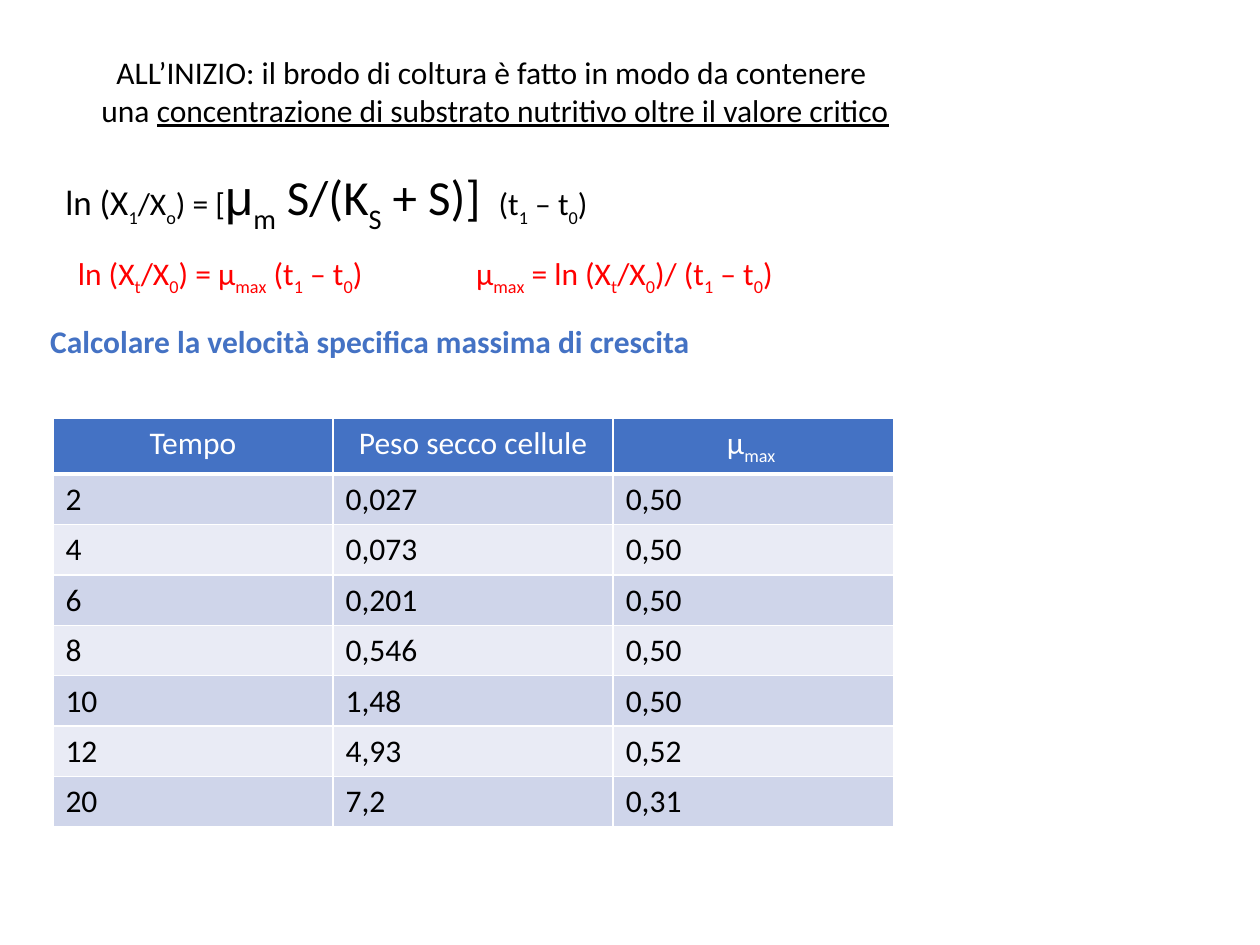
from lxml.etree import SubElement
from pptx import Presentation
from pptx.dml.color import RGBColor
from pptx.enum.text import MSO_AUTO_SIZE, PP_ALIGN
from pptx.oxml.ns import qn
from pptx.util import Inches, Pt

BLACK = RGBColor(0x00, 0x00, 0x00)
WHITE = RGBColor(0xFF, 0xFF, 0xFF)
RED = RGBColor(0xFF, 0x00, 0x00)
BLUE = RGBColor(0x44, 0x72, 0xC4)
BAND_DARK = RGBColor(0xCF, 0xD5, 0xEA)
BAND_LIGHT = RGBColor(0xE9, 0xEB, 0xF5)


def add_runs(paragraph, text, color=BLACK, size=18, font="Calibri", drop=-25):
    """Add text as runs; parts between underscores become subscripts."""
    for index, part in enumerate(text.split("_")):
        if not part:
            continue
        run = paragraph.add_run()
        run.text = part
        run.font.name = font
        run.font.size = Pt(size)
        run.font.color.rgb = color
        if index % 2:
            run.font._element.set("baseline", str(drop * 1000))
    return run


def add_text_box(left, top, width, height, wrap=True):
    box = slide.shapes.add_textbox(Inches(left), Inches(top), Inches(width), Inches(height))
    box.text_frame.word_wrap = wrap
    box.text_frame.auto_size = MSO_AUTO_SIZE.SHAPE_TO_FIT_TEXT
    return box.text_frame


presentation = Presentation()
presentation.slide_width = Inches(10)
presentation.slide_height = Inches(7.5)
slide = presentation.slides.add_slide(presentation.slide_layouts[6])

# Introduction
introduction = add_text_box(0.3, 0.37, 7.26, 0.71)
first_line = introduction.paragraphs[0]
second_line = introduction.add_paragraph()
first_line.alignment = second_line.alignment = PP_ALIGN.CENTER
add_runs(first_line, "ALL’INIZIO: il brodo di coltura è fatto in modo da contenere ")
add_runs(second_line, "una ")
underlined = add_runs(second_line, "concentrazione di substrato nutritivo oltre il valore critico")
underlined.font.underline = True

# Task
task = add_text_box(0.3, 2.51, 5.32, 0.4, wrap=False)
add_runs(task.paragraphs[0], "Calcolare la velocità specifica massima di crescita", BLUE).font.bold = True

# Growth table
header = ["Tempo", "Peso secco cellule", "μ_max _"]
measurements = [
    ["2", "0,027", "0,50"],
    ["4", "0,073", "0,50"],
    ["6", "0,201", "0,50"],
    ["8", "0,546", "0,50"],
    ["10", "1,48", "0,50"],
    ["12", "4,93", "0,52"],
    ["20", "7,2", "0,31"],
]
rows = [header] + measurements
table = slide.shapes.add_table(
    len(rows), len(header), Inches(0.42), Inches(3.32), Inches(6.67), Inches(3.24)
).table
for column in table.columns:
    column.width = Inches(6.67 / len(header))
for row_index, values in enumerate(rows):
    is_header = row_index == 0
    table.rows[row_index].height = Inches(0.44 if is_header else 0.4)
    for column_index, value in enumerate(values):
        cell = table.cell(row_index, column_index)
        paragraph = cell.text_frame.paragraphs[0]
        if is_header:
            paragraph.alignment = PP_ALIGN.CENTER
        add_runs(paragraph, value, WHITE if is_header else BLACK)
        properties = cell._tc.get_or_add_tcPr()
        for side in ("lnL", "lnR", "lnT", "lnB"):
            line_width = Pt(3 if is_header and side == "lnB" else 1)
            border = SubElement(properties, qn(f"a:{side}"), w=str(line_width))
            border_fill = SubElement(border, qn("a:solidFill"))
            SubElement(border_fill, qn("a:srgbClr"), val=str(WHITE))
        cell.fill.solid()
        band = BAND_DARK if row_index % 2 else BAND_LIGHT
        cell.fill.fore_color.rgb = BLUE if is_header else band

# Maximum growth rate, two forms set apart by a tab stop
maximum_rate = add_text_box(0.52, 1.97, 6.81, 0.4).paragraphs[0]
tab_stops = SubElement(maximum_rate._p.get_or_add_pPr(), qn("a:tabLst"))
SubElement(tab_stops, qn("a:tab"), pos=str(Inches(3.16)), algn="l")
add_runs(
    maximum_rate,
    "ln (X_t_/X_0_) = μ_max_ (t_1_ – t_0_)\tμ_max_ = ln (X_t_/X_0_)/ (t_1_ – t_0_)",
    RED,
)

# Growth law
growth_law = add_text_box(0.42, 1.27, 5, 0.57).paragraphs[0]
for text, size, font in [
    ("ln (X", 20, "Calibri"),
    ("_1_/X_o_) = [", 18, "Calibri"),
    ("μ", 28, "Arial"),
    ("_m_ S/(K_S_ + S)] ", 28, "Calibri"),
    (" (t_1_ – t_0_)", 18, "Calibri"),
]:
    add_runs(growth_law, text, size=size, font=font, drop=-30)

presentation.save("out.pptx")
